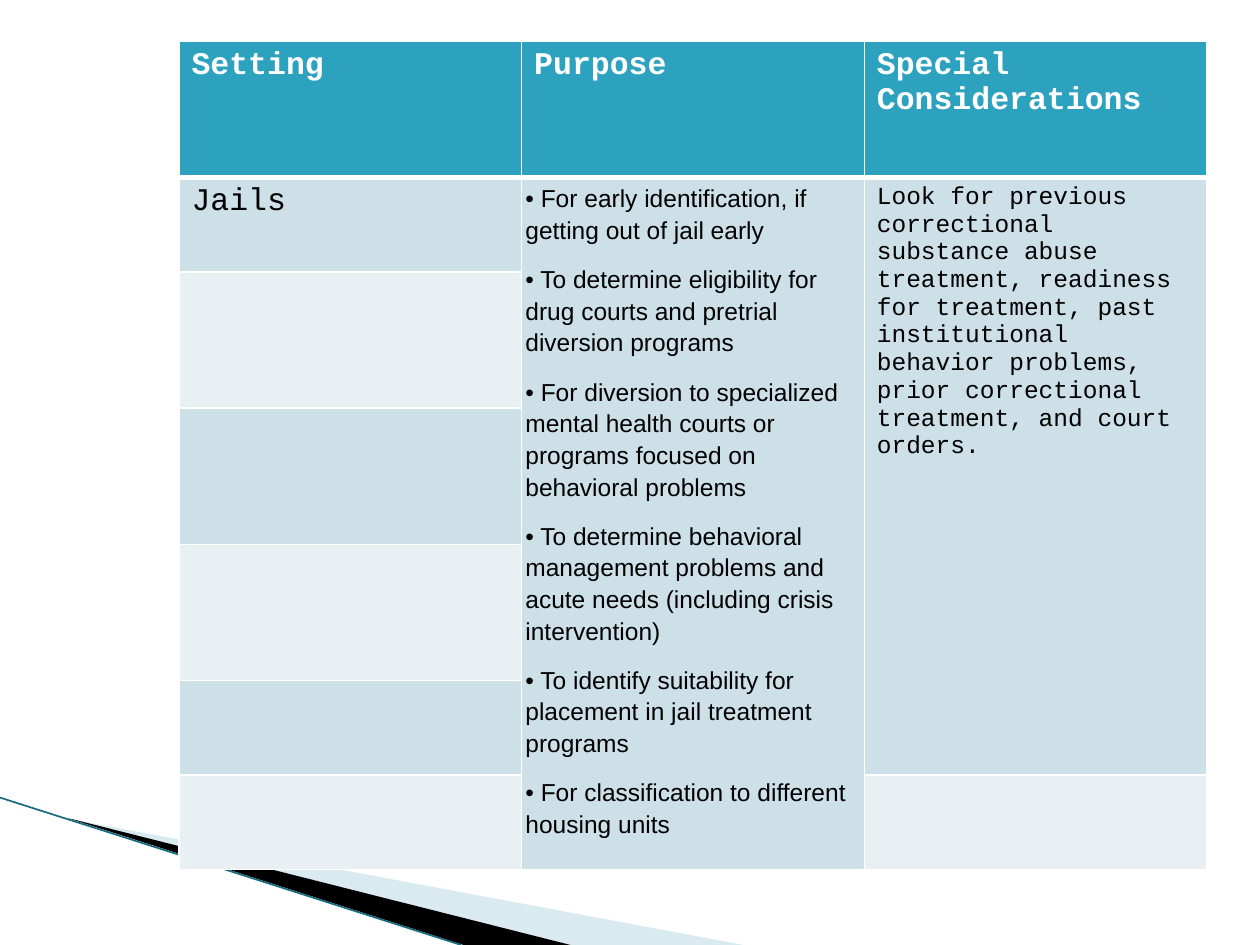
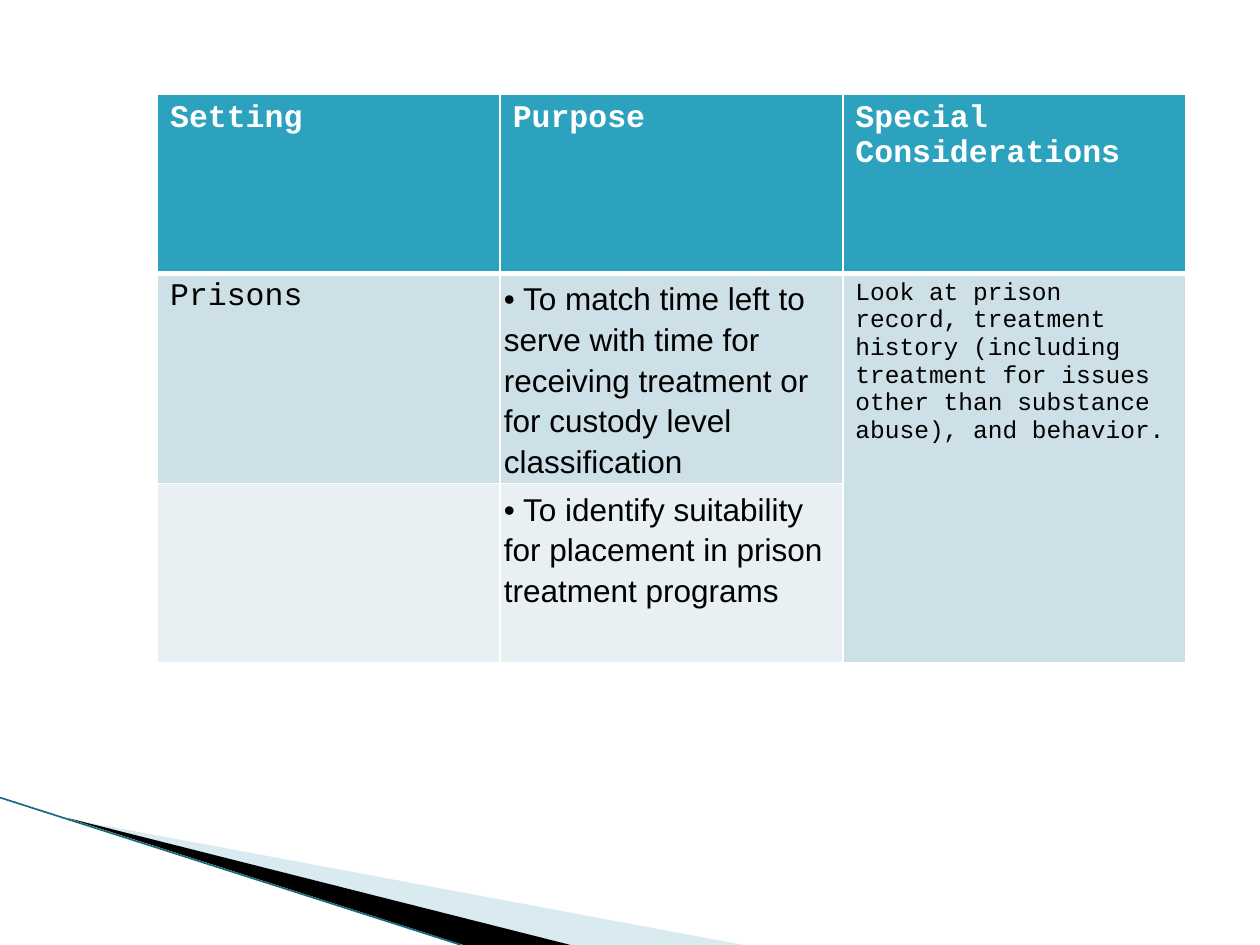
from lxml import etree
from pptx import Presentation
from pptx.dml.color import RGBColor
from pptx.enum.shapes import MSO_CONNECTOR
from pptx.oxml.ns import qn
from pptx.util import Inches, Pt

STRAIGHT = MSO_CONNECTOR.STRAIGHT

WHITE = RGBColor(0xFF, 0xFF, 0xFF)
BLACK = RGBColor(0x00, 0x00, 0x00)
HEADER_TEAL = RGBColor(0x2D, 0xA2, 0xBF)
BAND_DARK = RGBColor(0xCD, 0xE0, 0xE8)
BAND_LIGHT = RGBColor(0xE8, 0xF0, 0xF4)
WEDGE_BLUE = RGBColor(0xA0, 0xCB, 0xDC)
EDGE_TEAL = RGBColor(0x17, 0x6B, 0x7E)

MONO = "Courier New"
SANS = "Arial"
HEADINGS = ["Setting", "Purpose", "Special Considerations"]
COLUMN_WIDTH = 2.72
PURPOSE_MARGIN = Inches(0.03)

JAIL_PURPOSES = [
    "• For early identification, if getting out of jail early",
    "• To determine eligibility for drug courts and pretrial diversion programs",
    "• For diversion to specialized mental health courts or programs focused on behavioral problems",
    "• To determine behavioral management problems and acute needs (including crisis intervention)",
    "• To identify suitability for placement in jail treatment programs",
    "• For classification to different housing units",
]
JAIL_CONSIDERATIONS = (
    "Look for previous correctional substance abuse treatment, readiness for treatment, "
    "past institutional behavior problems, prior correctional treatment, and court orders."
)
PRISON_PURPOSES = [
    "• To match time left to serve with time for receiving treatment or for custody level classification",
    "• To identify suitability for placement in prison treatment programs",
]
PRISON_CONSIDERATIONS = (
    "Look at prison record, treatment history (including treatment for issues "
    "other than substance abuse), and behavior."
)


def add_wedge(slide, points, color, opacity=100):
    corners = [(Inches(x), Inches(y)) for x, y in points]
    builder = slide.shapes.build_freeform(*corners[0])
    builder.add_line_segments(corners[1:])
    shape = builder.convert_to_shape()
    shape.shadow.inherit = False
    shape.line.fill.background()
    shape.fill.solid()
    shape.fill.fore_color.rgb = color
    if opacity < 100:
        fill_color = shape.element.spPr.find(f".//{qn('a:srgbClr')}")
        etree.SubElement(fill_color, qn("a:alpha"), val=str(opacity * 1000))
    return shape


def add_edge_line(slide, start, end):
    points = [Inches(value) for value in (*start, *end)]
    connector = slide.shapes.add_connector(STRAIGHT, *points)
    connector.line.color.rgb = EDGE_TEAL
    connector.line.width = Pt(0.95)
    etree.SubElement(connector.element.spPr, qn("a:effectLst"))
    return connector


def move_corner_to_layout(slide):
    corner = [
        add_wedge(slide, [(0.55, 6.5), (5.9, 7.5), (4.53, 7.5)], WEDGE_BLUE, 40),
        add_wedge(slide, [(0.53, 6.49), (4.53, 7.5), (3.68, 7.5)], BLACK),
        add_edge_line(slide, (0, 6.33), (3.66, 7.5)),
    ]
    for shape in corner:
        slide.slide_layout.shapes.element.append(shape.element)


def style_cell(cell, color, top=1, bottom=1):
    properties = cell._tc.get_or_add_tcPr()
    for side, width in (("L", 1), ("R", 1), ("T", top), ("B", bottom)):
        border = etree.SubElement(properties, qn(f"a:ln{side}"), w=str(Pt(width)))
        fill = etree.SubElement(border, qn("a:solidFill"))
        etree.SubElement(fill, qn("a:srgbClr"), val=str(WHITE))
    cell.fill.solid()
    cell.fill.fore_color.rgb = color


def write_cell(cell, text, size=18, font=MONO, color=BLACK, bold=False):
    cell.text_frame.text = text
    for paragraph in cell.text_frame.paragraphs:
        for run in paragraph.runs:
            run.font.name = font
            run.font.size = Pt(size)
            run.font.bold = bold
            run.font.color.rgb = color


def write_purposes(cell, purposes, size):
    cell.margin_left = cell.margin_right = PURPOSE_MARGIN
    cell.margin_top = cell.margin_bottom = PURPOSE_MARGIN
    write_cell(cell, "\n".join(purposes), size, SANS)
    for paragraph in cell.text_frame.paragraphs:
        paragraph.line_spacing = 1.15
        paragraph.space_after = Pt(10)


def add_setting_table(slide, left, top, row_heights, setting, considerations):
    frame = slide.shapes.add_table(
        len(row_heights), len(HEADINGS), Inches(left), Inches(top),
        Inches(COLUMN_WIDTH * len(HEADINGS)), Inches(sum(row_heights)))
    table = frame.table
    for column in table.columns:
        column.width = Inches(COLUMN_WIDTH)
    for index, height in enumerate(row_heights):
        table.rows[index].height = Inches(height)
        for cell in table.rows[index].cells:
            if index == 0:
                style_cell(cell, HEADER_TEAL, bottom=3)
            else:
                band = BAND_DARK if index % 2 else BAND_LIGHT
                style_cell(cell, band, top=3 if index == 1 else 1)
    for index, heading in enumerate(HEADINGS):
        write_cell(table.cell(0, index), heading, color=WHITE, bold=True)
    write_cell(table.cell(1, 0), setting)
    write_cell(table.cell(1, 2), considerations, 14)
    return table


def add_jails_slide(slide):
    heights = [1.08, 0.75, 1.08, 1.08, 1.08, 0.75, 0.75]
    table = add_setting_table(slide, 1.42, 0.33, heights, "Jails", JAIL_CONSIDERATIONS)
    write_purposes(table.cell(1, 1), JAIL_PURPOSES, 14)
    table.cell(1, 1).merge(table.cell(6, 1))
    table.cell(1, 2).merge(table.cell(5, 2))


def add_prisons_slide(slide):
    heights = [1.42, 1.66, 1.42]
    table = add_setting_table(slide, 1.25, 0.75, heights, "Prisons", PRISON_CONSIDERATIONS)
    for row, purpose in enumerate(PRISON_PURPOSES, start=1):
        write_purposes(table.cell(row, 1), [purpose], 18)
    table.cell(1, 2).merge(table.cell(2, 2))


def main():
    presentation = Presentation()
    presentation.slide_width = Inches(10)
    presentation.slide_height = Inches(7.5)
    blank_layout = presentation.slide_layouts[6]
    jails_slide = presentation.slides.add_slide(blank_layout)
    move_corner_to_layout(jails_slide)
    add_jails_slide(jails_slide)
    add_prisons_slide(presentation.slides.add_slide(blank_layout))
    presentation.save("out.pptx")


if __name__ == "__main__":
    main()
